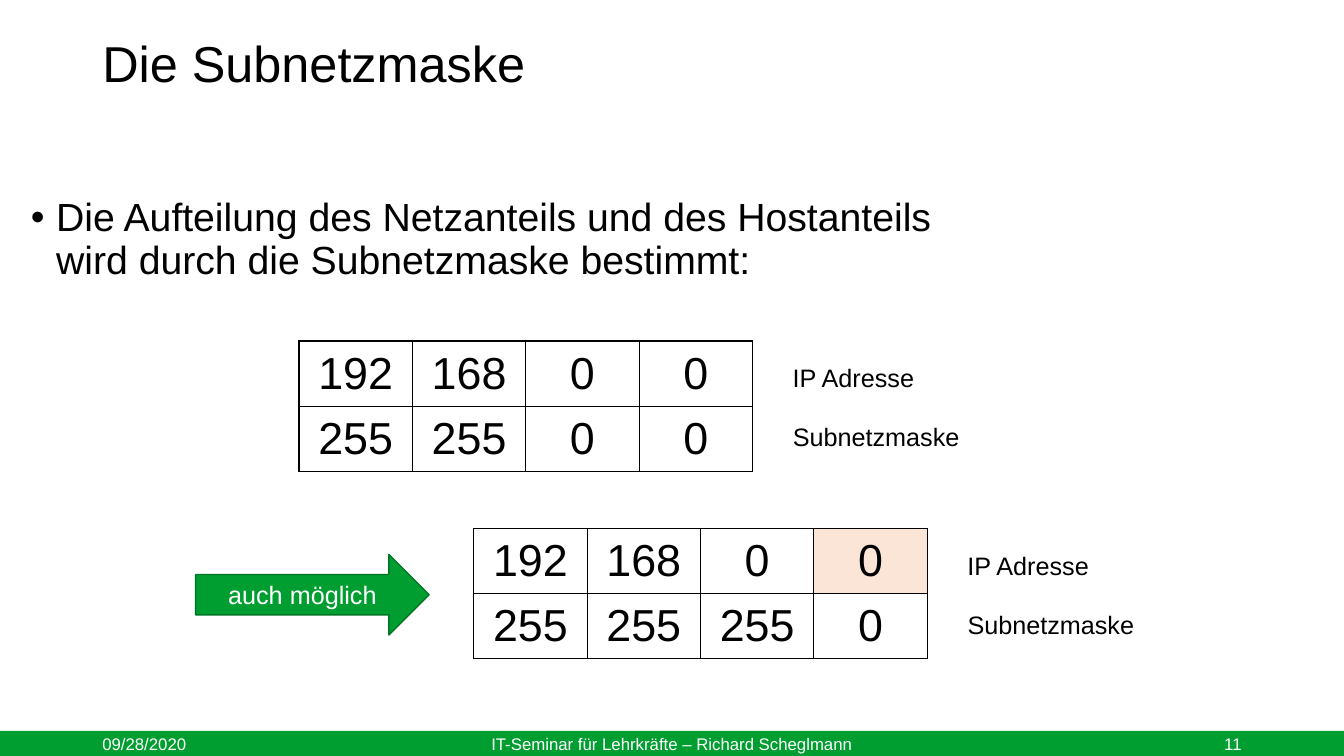
"""Build the slide on the subnet mask, laid out on a grid of 160 columns by 90 rows."""
from dataclasses import dataclass

from lxml import etree
from pptx import Presentation
from pptx.dml.color import RGBColor
from pptx.enum.shapes import MSO_SHAPE
from pptx.enum.text import MSO_ANCHOR, PP_ALIGN
from pptx.oxml.ns import qn
from pptx.shapes.base import BaseShape
from pptx.slide import Slide
from pptx.text.text import TextFrame
from pptx.util import Inches, Pt

RECT, ARROW = MSO_SHAPE.RECTANGLE, MSO_SHAPE.RIGHT_ARROW
LEFT, CENTER, RIGHT = PP_ALIGN.LEFT, PP_ALIGN.CENTER, PP_ALIGN.RIGHT
TOP, MIDDLE = MSO_ANCHOR.TOP, MSO_ANCHOR.MIDDLE
UNIT = Inches(1) / 12
FONT = "Arial"
BLACK, WHITE, GREEN, DARK_GREEN, PEACH = "000000", "FFFFFF", "009E30", "007524", "FBE5D6"


@dataclass(frozen=True)
class Box:
    """A rectangle in grid columns and rows."""
    col: float
    row: float
    cols: float
    rows: float

    def emu(self) -> tuple[int, ...]:
        """Return left, top, width and height in EMU."""
        return tuple(round(v * UNIT) for v in (self.col, self.row, self.cols, self.rows))


@dataclass(frozen=True)
class Text:
    """A text with its place and style."""
    box: Box
    text: str
    size: float
    color: str = BLACK
    align: PP_ALIGN = LEFT
    anchor: MSO_ANCHOR = MIDDLE
    wrap: bool = True
    spacing: float = 1.0
    bullet: bool = False


@dataclass(frozen=True)
class AddressTable:
    """An address above its mask, with optional highlighted cells."""
    col: float
    row: float
    octets: tuple[tuple[int, ...], ...]
    highlights: tuple[tuple[int, int], ...] = ()


TEXTS = (
    Text(Box(11, 4.8, 126.4, 6.2), "Die Subnetzmaske", 36, spacing=0.9),
    Text(Box(2.5, 23, 114.4, 25.9),
         "Die Aufteilung des Netzanteils und des Hostanteils wird durch die "
         "Subnetzmaske bestimmt:", 28, anchor=TOP, spacing=0.9, bullet=True),
    Text(Box(11, 87, 36, 3), "09/28/2020", 12, WHITE),
    Text(Box(53, 87, 54, 3), "IT-Seminar für Lehrkräfte – Richard Scheglmann",
         12, WHITE, CENTER),
    Text(Box(113, 87, 36, 3), "11", 12, WHITE, RIGHT),
)
TABLES = (
    AddressTable(35.6, 40.6, ((192, 168, 0, 0), (255, 255, 0, 0))),
    AddressTable(56.4, 62.9, ((192, 168, 0, 0), (255, 255, 255, 0)), ((0, 3),)),
)
ROW_LABELS = ("IP Adresse", 17), ("Subnetzmaske", 22.4)
CALLOUT = Text(Box(23.3, 66, 27.8, 9.6), "auch möglich", 18, WHITE, CENTER)


def rgb(color: str) -> RGBColor:
    """Turn a hex string into a colour."""
    return RGBColor.from_string(color)


def write(tf: TextFrame, item: Text) -> None:
    """Fill a text frame with one styled paragraph."""
    tf.word_wrap = item.wrap
    tf.vertical_anchor = item.anchor
    p = tf.paragraphs[0]
    p.text = item.text
    p.alignment = item.align
    p.line_spacing = item.spacing
    if item.bullet:
        props = p._p.get_or_add_pPr()
        props.set("marL", str(Inches(0.25)))
        props.set("indent", str(-Inches(0.25)))
        etree.SubElement(props, qn("a:buFont"), typeface=FONT)
        etree.SubElement(props, qn("a:buChar"), char="•")
    p.font.name = FONT
    p.font.size = Pt(item.size)
    p.font.color.rgb = rgb(item.color)


def add_text(s: Slide, item: Text) -> None:
    """Add a text box."""
    write(s.shapes.add_textbox(*item.box.emu()).text_frame, item)


def add_shape(s: Slide, kind: MSO_SHAPE, box: Box, line: str = "") -> BaseShape:
    """Add a green shape, outlined if a line colour is given."""
    sp = s.shapes.add_shape(kind, *box.emu())
    sp.shadow.inherit = False
    sp.fill.solid()
    sp.fill.fore_color.rgb = rgb(GREEN)
    if line:
        sp.line.color.rgb = rgb(line)
        sp.line.width = Pt(1)
    else:
        sp.line.fill.background()
    return sp


def add_borders(props: etree._Element) -> None:
    """Put thin black lines on all four sides of a cell."""
    for i, side in enumerate("LRTB"):
        ln = etree.Element(qn(f"a:ln{side}"), w=str(Pt(1)))
        fill = etree.SubElement(ln, qn("a:solidFill"))
        etree.SubElement(fill, qn("a:srgbClr"), val=BLACK)
        props.insert(i, ln)


def add_address_table(s: Slide, item: AddressTable) -> None:
    """Add an address table and the labels to its right."""
    box = Box(item.col, item.row, 54, 15.5)
    table = s.shapes.add_table(2, 4, *box.emu()).table
    table.first_row = table.horz_banding = False
    for r, octets in enumerate(item.octets):
        for c, octet in enumerate(octets):
            cell = table.cell(r, c)
            cell.vertical_anchor = MIDDLE
            if (r, c) in item.highlights:
                cell.fill.solid()
                cell.fill.fore_color.rgb = rgb(PEACH)
            else:
                cell.fill.background()
            add_borders(cell._tc.get_or_add_tcPr())
            write(cell.text_frame, Text(box, str(octet), 32, align=CENTER))
    for r, (label, cols) in enumerate(ROW_LABELS):
        place = Box(item.col + 57.6, item.row + 2 + 7 * r, cols, 4.8)
        add_text(s, Text(place, label, 18, anchor=TOP, wrap=False))


def main() -> None:
    """Build and save the slide."""
    prs = Presentation()
    prs.slide_width, prs.slide_height = round(160 * UNIT), round(90 * UNIT)
    s = prs.slides.add_slide(prs.slide_layouts[6])
    add_shape(s, RECT, Box(0, 87, 160, 3))
    for item in TEXTS:
        add_text(s, item)
    for table in TABLES:
        add_address_table(s, table)
    write(add_shape(s, ARROW, CALLOUT.box, DARK_GREEN).text_frame, CALLOUT)
    prs.save("out.pptx")


if __name__ == "__main__":
    main()
